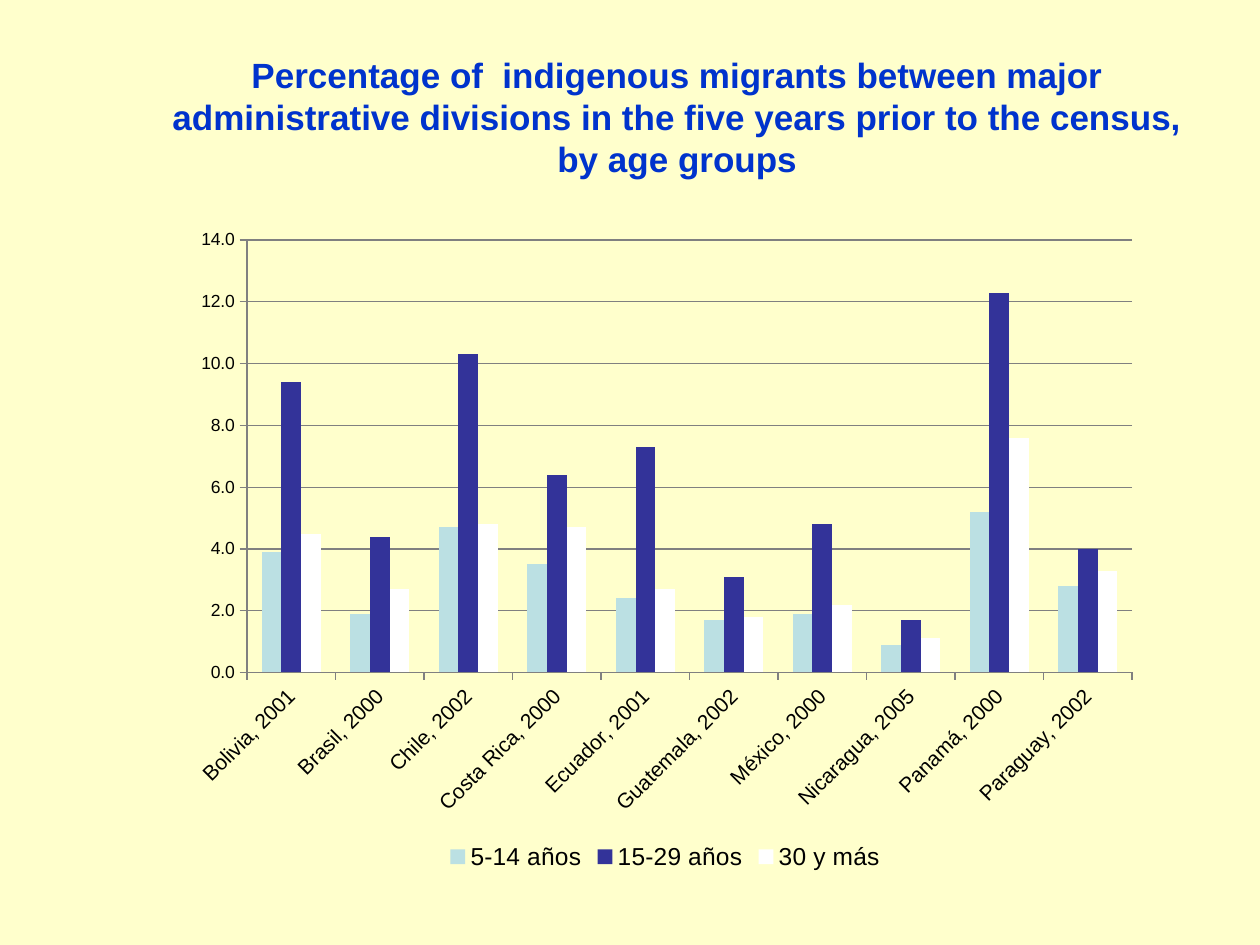
from pptx import Presentation
from pptx.chart.data import CategoryChartData
from pptx.dml.color import RGBColor
from pptx.enum.chart import XL_CHART_TYPE, XL_LEGEND_POSITION, XL_TICK_MARK
from pptx.enum.text import MSO_ANCHOR, PP_ALIGN
from pptx.oxml import parse_xml
from pptx.oxml.ns import nsdecls
from pptx.util import Inches, Pt

FONT = "Arial"
COLORS = {"background": "FFFFCC", "title": "0033CC", "text": "000000", "axis": "808080"}
TITLE = (
    "Percentage of  indigenous migrants between major administrative divisions "
    "in the five years prior to the census, by age groups"
)
CENSUSES = [
    "Bolivia, 2001", "Brasil, 2000", "Chile, 2002", "Costa Rica, 2000", "Ecuador, 2001",
    "Guatemala, 2002", "México, 2000", "Nicaragua, 2005", "Panamá, 2000", "Paraguay, 2002",
]
AGE_GROUPS = [
    ("5-14 años", "BBE0E3", [3.9, 1.9, 4.7, 3.5, 2.4, 1.7, 1.9, 0.9, 5.2, 2.8]),
    ("15-29 años", "333399", [9.4, 4.4, 10.3, 6.4, 7.3, 3.1, 4.8, 1.7, 12.3, 4]),
    ("30 y más", "FFFFFF", [4.5, 2.7, 4.8, 4.7, 2.7, 1.8, 2.2, 1.1, 7.6, 3.3]),
]
PLOT_LAYOUT = {"x": 0.07, "y": 0.03, "w": 0.91, "h": 0.66}


def color(name):
    return RGBColor.from_string(COLORS[name])


def style_font(font, size, color_name, bold=False):
    font.name, font.size, font.bold = FONT, Pt(size), bold
    font.color.rgb = color(color_name)


def style_line(line):
    line.color.rgb = color("axis")
    line.width = Pt(0.75)


def add_title(slide):
    title = slide.shapes.title
    title.left, title.top, title.width, title.height = map(Inches, (1.25, 0.3, 8.25, 1.25))
    frame = title.text_frame
    frame.text = TITLE
    frame.word_wrap = True
    frame.vertical_anchor = MSO_ANCHOR.MIDDLE
    paragraph = frame.paragraphs[0]
    paragraph.alignment = PP_ALIGN.CENTER
    paragraph.line_spacing = 1.0
    style_font(paragraph.font, 20, "title", bold=True)


def place_plot(chart):
    plot_area = chart.element.xpath("c:chart/c:plotArea")[0]
    for layout in plot_area.xpath("c:layout"):
        plot_area.remove(layout)
    modes = "".join(f'<c:{key}Mode val="edge"/>' for key in "xy")
    sizes = "".join(f'<c:{key} val="{value}"/>' for key, value in PLOT_LAYOUT.items())
    plot_area.insert(0, parse_xml(
        f'<c:layout {nsdecls("c")}><c:manualLayout><c:layoutTarget val="inner"/>'
        f"{modes}{sizes}</c:manualLayout></c:layout>"
    ))


def add_migration_chart(slide):
    data = CategoryChartData(number_format="0.0")
    data.categories = CENSUSES
    for name, _, values in AGE_GROUPS:
        data.add_series(name, values)
    chart = slide.shapes.add_chart(
        XL_CHART_TYPE.COLUMN_CLUSTERED, *map(Inches, (1.42, 1.75, 7.72, 5.2)), data
    ).chart
    style_font(chart.font, 10, "text")
    chart.has_title = False
    place_plot(chart)

    plot = chart.plots[0]
    plot.gap_width, plot.overlap, plot.vary_by_categories = 150, 0, False
    for series, (_, fill_color, _) in zip(plot.series, AGE_GROUPS):
        series.format.fill.solid()
        series.format.fill.fore_color.rgb = RGBColor.from_string(fill_color)
        series.invert_if_negative = False

    for axis, size in ((chart.category_axis, 12), (chart.value_axis, 10)):
        axis.major_tick_mark = XL_TICK_MARK.OUTSIDE
        axis.minor_tick_mark = XL_TICK_MARK.NONE
        style_font(axis.tick_labels.font, size, "text")
        style_line(axis.format.line)
    label_body = chart.element.xpath("c:chart/c:plotArea/c:catAx/c:txPr/a:bodyPr")[0]
    label_body.set("rot", "-2700000")
    label_body.set("vert", "horz")

    value_axis = chart.value_axis
    value_axis.minimum_scale, value_axis.maximum_scale, value_axis.major_unit = 0, 14, 2
    value_axis.tick_labels.number_format = "0.0"
    value_axis.tick_labels.number_format_is_linked = False
    value_axis.has_major_gridlines = True
    style_line(value_axis.major_gridlines.format.line)

    chart.has_legend = True
    chart.legend.position = XL_LEGEND_POSITION.BOTTOM
    chart.legend.include_in_layout = False
    style_font(chart.legend.font, 14, "text")


def main():
    """Build the slide on indigenous migration by age group."""
    presentation = Presentation()
    presentation.slide_width, presentation.slide_height = Inches(10), Inches(7.5)
    slide = presentation.slides.add_slide(presentation.slide_layouts[5])
    slide.background.fill.solid()
    slide.background.fill.fore_color.rgb = color("background")
    add_title(slide)
    add_migration_chart(slide)
    presentation.save("out.pptx")


if __name__ == "__main__":
    main()
